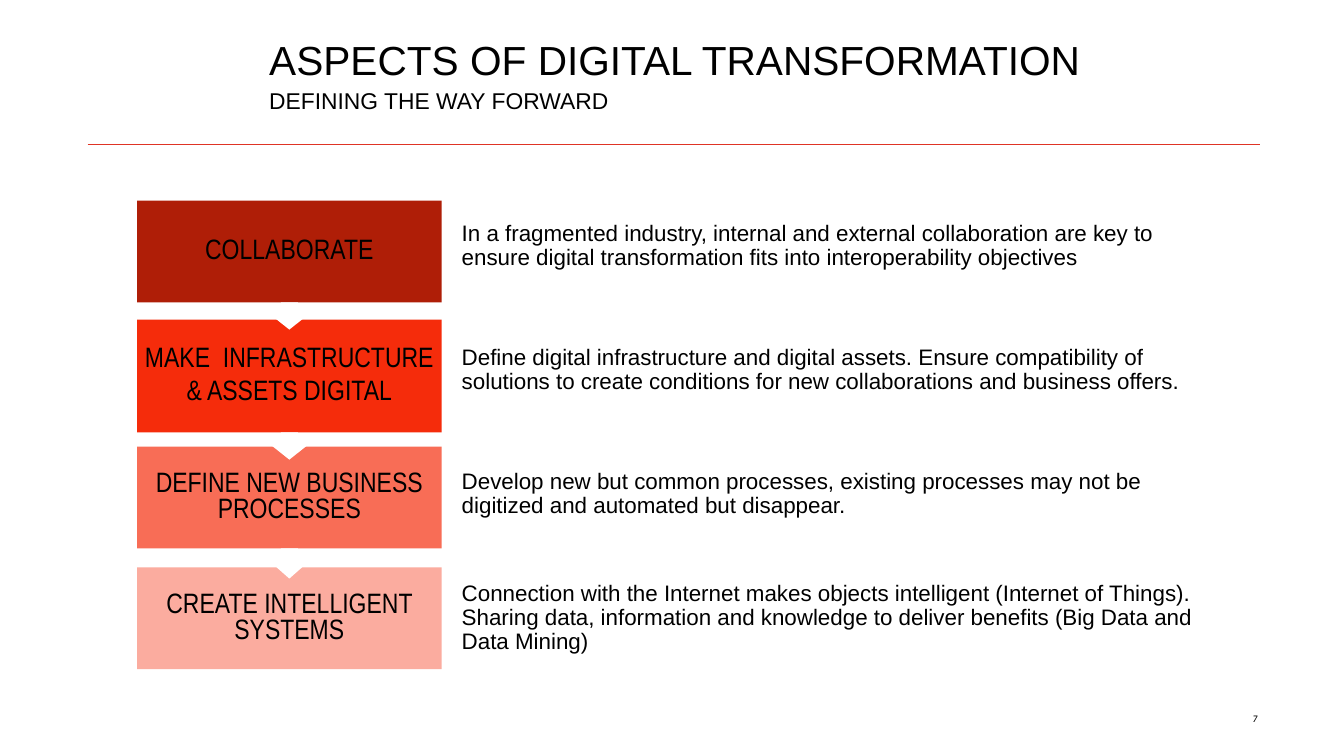
from pptx import Presentation
from pptx.dml.color import RGBColor
from pptx.enum.shapes import MSO_CONNECTOR, MSO_SHAPE
from pptx.enum.text import MSO_ANCHOR, MSO_AUTO_SIZE, PP_ALIGN
from pptx.oxml.ns import qn
from pptx.util import Inches, Pt

RECT, ARROW = MSO_SHAPE.RECTANGLE, MSO_SHAPE.DOWN_ARROW
LINE = MSO_CONNECTOR.STRAIGHT
TOP, MIDDLE, BOTTOM = MSO_ANCHOR.TOP, MSO_ANCHOR.MIDDLE, MSO_ANCHOR.BOTTOM
LEFT, CENTER, RIGHT = PP_ALIGN.LEFT, PP_ALIGN.CENTER, PP_ALIGN.RIGHT
FIXED = MSO_AUTO_SIZE.NONE

COLORS = {
    "ink": "000000", "paper": "FFFFFF", "rule": "DF3425",
    "dark": "AF1E07", "main": "F52C0B", "mid": "F86D56", "pale": "FBAC9F",
}
FONTS = {
    "title": {"name": "Arial", "size": Pt(29), "bold": False},
    "sub": {"name": "Arial", "size": Pt(16.3)},
    "step": {"name": "Arial Narrow", "size": Pt(20)},
    "note": {"name": "Arial", "size": Pt(16)},
    "page": {"name": "Karla", "size": Pt(7.3), "italic": True},
}

# Label lines, colour, label top and height, note
STEPS = [
    (["COLLABORATE"], "dark", 1.99, 1.01,
     "In a fragmented industry, internal and external collaboration are key to "
     "ensure digital transformation fits into interoperability objectives"),
    (["MAKE  INFRASTRUCTURE", "& ASSETS DIGITAL"], "main", 3.17, 1.12,
     "Define digital infrastructure and digital assets. Ensure compatibility of "
     "solutions to create conditions for new collaborations and business offers."),
    (["DEFINE NEW BUSINESS PROCESSES"], "mid", 4.43, 1.01,
     "Develop new but common processes, existing processes may not be "
     "digitized and automated but disappear."),
    (["CREATE INTELLIGENT SYSTEMS"], "pale", 5.63, 1.01,
     "Connection with the Internet makes objects intelligent (Internet of Things). "
     "Sharing data, information and knowledge to deliver benefits "
     "(Big Data and Data Mining)"),
]
NOTE_TOP, NOTE_GAP = 1.94, 1.23
ARROWS = [0.27, 0.27, 0.3]


def apply(item, values):
    for key, value in values.items():
        setattr(item, key, value)


class Deck:
    def __init__(self, wide, high):
        self.prs = Presentation()
        apply(self.prs, {"slide_width": Inches(wide), "slide_height": Inches(high)})
        self.slide = self.prs.slides.add_slide(self.prs.slide_layouts[5])

    def color(self, name):
        return RGBColor.from_string(COLORS[name])

    def letter(self, shape, lines, font, align=LEFT, anchor=TOP,
               pads=(0.04, 0, 0.04, 0), space=1.0, after=(0,), wrap=True):
        frame = shape.text_frame
        sides = ("margin_left", "margin_top", "margin_right", "margin_bottom")
        apply(frame, dict(zip(sides, map(Inches, pads))))
        apply(frame, {"auto_size": FIXED, "word_wrap": wrap,
                      "vertical_anchor": anchor})
        frame.text = "\n".join(lines)
        for para, gap in zip(frame.paragraphs, after):
            apply(para, {"alignment": align, "line_spacing": space,
                         "space_before": Pt(0), "space_after": Pt(gap)})
            apply(para.font, FONTS[font])
            para.font.color.rgb = self.color("ink")

    def title(self, box, text):
        shape = self.slide.shapes.title
        apply(shape, dict(zip(("left", "top", "width", "height"), map(Inches, box))))
        self.letter(shape, [text], "title", anchor=BOTTOM, space=0.9)

    def text(self, box, text, font, **style):
        shape = self.slide.shapes.add_textbox(*map(Inches, box))
        self.letter(shape, [text], font, **style)

    def shape(self, kind, box, fill):
        shape = self.slide.shapes.add_shape(kind, *map(Inches, box))
        shape.shadow.inherit = False
        shape.fill.solid()
        shape.fill.fore_color.rgb = self.color(fill)
        shape.line.fill.background()
        return shape

    def rule(self, x1, x2, y):
        line = self.slide.shapes.add_connector(LINE, *map(Inches, (x1, y, x2, y)))
        line.line.color.rgb = self.color("rule")
        line.line.width = Pt(0.25)
        props = line._element.spPr
        props.append(props.makeelement(qn("a:effectLst"), {}))


def main():
    deck = Deck(13.33, 7.5)

    # Heading, rule and page number
    deck.title((2.63, 0.4, 9.88, 0.44), "ASPECTS OF DIGITAL TRANSFORMATION")
    deck.text((2.63, 0.86, 9.88, 0.31), "DEFINING THE WAY FORWARD", "sub")
    deck.rule(0.87, 12.5, 1.43)
    deck.text((12.34, 7.07, 0.17, 0.12), "7", "page",
              align=RIGHT, anchor=MIDDLE, wrap=False)

    # Steps with their notes
    for row, (lines, fill, top, high, words) in enumerate(STEPS):
        note = deck.shape(RECT, (4.38, NOTE_TOP + row * NOTE_GAP, 7.73, 1.01), "paper")
        deck.letter(note, [words], "note", anchor=MIDDLE,
                    pads=(0.2, 0.12, 0.12, 0.12), space=0.9, after=(10,))
        label = deck.shape(RECT, (1.36, top, 3.02, high), fill)
        after = [4] * (len(lines) - 1) + [10]
        deck.letter(label, lines, "step", align=CENTER, anchor=MIDDLE,
                    pads=(0.04,) * 4, space=0.8, after=after)

    # Arrows from each step to the next
    for (_, _, top, high, _), size in zip(STEPS, ARROWS):
        deck.shape(ARROW, (2.7, top + high, 0.34, size), "paper")

    deck.prs.save("out.pptx")


if __name__ == "__main__":
    main()
